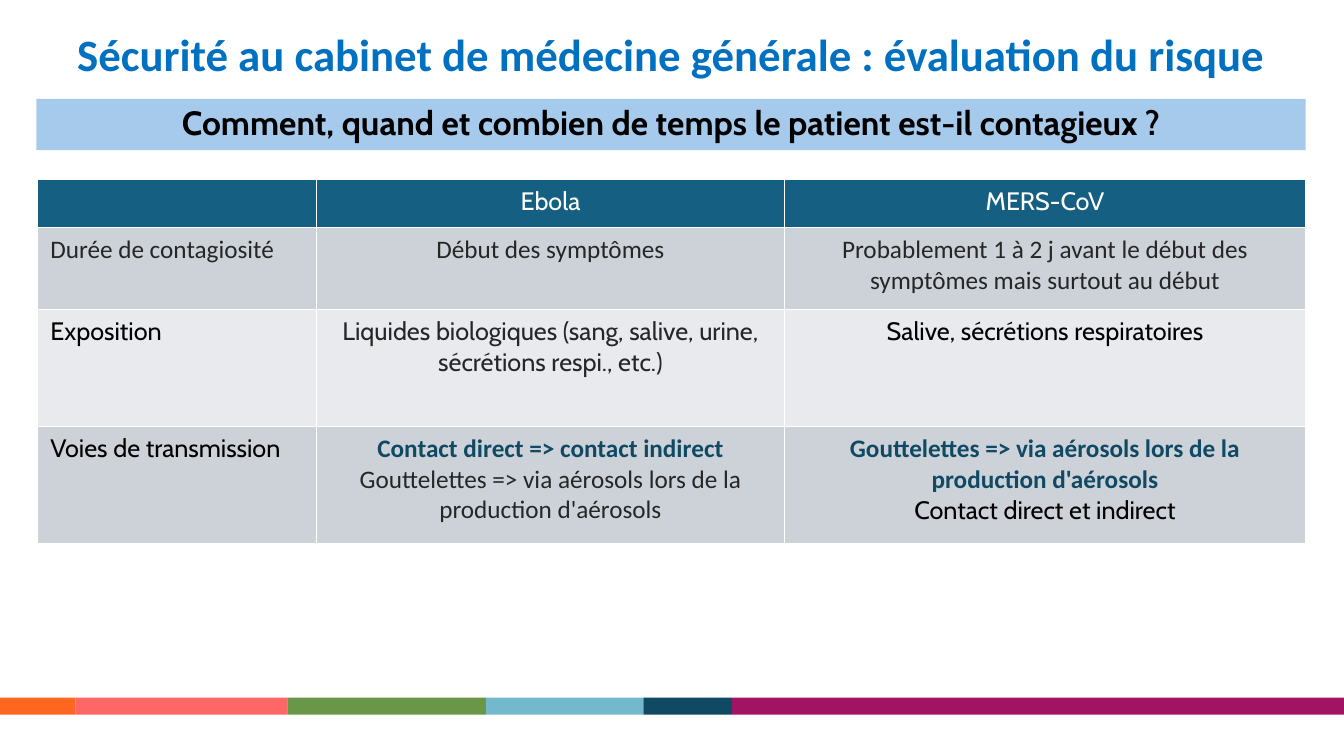
"""Build the contagion risk slide for general practice."""
from itertools import pairwise

from lxml.etree import SubElement
from pptx import Presentation
from pptx.dml.color import RGBColor
from pptx.enum.shapes import MSO_SHAPE
from pptx.enum.text import MSO_ANCHOR, MSO_AUTO_SIZE, PP_ALIGN
from pptx.oxml.ns import qn
from pptx.util import Inches, Pt

WHITE = RGBColor(0xFF, 0xFF, 0xFF)
BLACK = RGBColor(0, 0, 0)
GREY = RGBColor(0x26, 0x26, 0x26)
BLUE = RGBColor(0x00, 0x70, 0xC0)
SKY = RGBColor(0xA6, 0xCA, 0xEC)
TEAL = RGBColor(0x15, 0x60, 0x82)
NAVY = RGBColor(0x10, 0x49, 0x63)
DARK = RGBColor(0xCC, 0xD2, 0xD8)
LIGHT = RGBColor(0xE8, 0xEA, 0xED)
ORANGE = RGBColor(0xFF, 0x66, 0x1F)
PINK = RGBColor(0xFF, 0x66, 0x66)
GREEN = RGBColor(0x6A, 0x96, 0x48)
AQUA = RGBColor(0x74, 0xB8, 0xCE)
PLUM = RGBColor(0xA2, 0x13, 0x61)

EDGES = [0, 0.75, 2.85, 4.82, 6.38, 7.26, 13.33]
BANDS = [ORANGE, PINK, GREEN, AQUA, NAVY, PLUM]
COLS = [2.77, 4.64, 5.17]
ROWS = [0.48, 0.81, 1.16, 1.16]
FILLS = [TEAL, DARK, LIGHT, DARK]

HEAD = dict(color=WHITE)
PLAIN = dict(color=BLACK)
SOFT = dict(color=GREY)
CALM = dict(font="Calibri", color=GREY)
BOLD = dict(font="Calibri", color=NAVY, bold=True)
SPRAY = "Gouttelettes => via aérosols lors de la production d'aérosols"
CELLS = [
    [[("", HEAD)], [("Ebola", HEAD)], [("MERS-CoV", HEAD)]],
    [
        [("Durée de contagiosité", CALM)],
        [("Début des symptômes", CALM)],
        [("Probablement 1 à 2 j avant le début des symptômes "
          "mais surtout au début", CALM)],
    ],
    [
        [("Exposition", PLAIN)],
        [("Liquides biologiques (sang, salive, urine, "
          "sécrétions respi., etc.)", SOFT)],
        [("Salive, sécrétions respiratoires", PLAIN)],
    ],
    [
        [("Voies de transmission", PLAIN)],
        [("Contact direct => contact indirect", BOLD), (SPRAY, CALM)],
        [(SPRAY, BOLD), ("Contact direct et indirect", PLAIN)],
    ],
]


def write(para, text, font="Cabin", size=18, color=BLACK, bold=False,
          align=PP_ALIGN.CENTER, space=1.0):
    """Fill a paragraph with formatted text."""
    para.text = text
    para.alignment = align
    para.line_spacing = space
    para.font.name = font
    para.font.size = Pt(size)
    para.font.color.rgb = color
    para.font.bold = bold


def frame(shape, wrap=True):
    """Centre the text of a shape vertically, with no margins."""
    text = shape.text_frame
    text.auto_size = MSO_AUTO_SIZE.NONE
    text.word_wrap = wrap
    text.vertical_anchor = MSO_ANCHOR.MIDDLE
    text.margin_left = text.margin_right = 0
    text.margin_top = text.margin_bottom = 0
    return text.paragraphs[0]


def block(slide, left, top, width, height, fill):
    """Add a plain filled rectangle."""
    shape = slide.shapes.add_shape(
        MSO_SHAPE.RECTANGLE, Inches(left), Inches(top),
        Inches(width), Inches(height))
    shape.shadow.inherit = False
    shape.fill.solid()
    shape.fill.fore_color.rgb = fill
    shape.line.fill.background()
    return shape


def title(slide, text):
    """Place and format the title."""
    shape = slide.shapes.title
    shape.left, shape.top = Inches(0.36), Inches(0.31)
    shape.width, shape.height = Inches(12.6), Inches(0.52)
    write(frame(shape, wrap=False), text, font="Calibri", size=32,
          color=BLUE, bold=True, space=0.9)


def border(cell):
    """Give a cell thin white borders."""
    props = cell._tc.get_or_add_tcPr()
    for side in ("lnL", "lnR", "lnT", "lnB"):
        line = SubElement(props, qn(f"a:{side}"), w=str(Pt(1)))
        fill = SubElement(line, qn("a:solidFill"))
        SubElement(fill, qn("a:srgbClr"), val=str(WHITE))


def fill_cell(cell, lines, fill, align):
    """Style a cell and write its paragraphs."""
    border(cell)
    cell.fill.solid()
    cell.fill.fore_color.rgb = fill
    cell.margin_left = cell.margin_right = Inches(0.13)
    cell.margin_top = cell.margin_bottom = Inches(0.07)
    text = cell.text_frame
    for num, (line, style) in enumerate(lines):
        para = text.add_paragraph() if num else text.paragraphs[0]
        write(para, line, align=align, **style)


def table(slide):
    """Add the table comparing both diseases."""
    grid = slide.shapes.add_table(
        len(ROWS), len(COLS), Inches(0.37), Inches(1.78),
        Inches(sum(COLS)), Inches(sum(ROWS))).table
    for col, width in zip(grid.columns, COLS):
        col.width = Inches(width)
    for row, height, cells, fill in zip(grid.rows, ROWS, CELLS, FILLS):
        row.height = Inches(height)
        for num, (cell, lines) in enumerate(zip(row.cells, cells)):
            align = PP_ALIGN.CENTER if num else PP_ALIGN.LEFT
            fill_cell(cell, lines, fill, align)


def main():
    """Build and save the slide."""
    deck = Presentation()
    deck.slide_width, deck.slide_height = Inches(13.33), Inches(7.5)
    slide = deck.slides.add_slide(deck.slide_layouts[5])
    for (left, right), color in zip(pairwise(EDGES), BANDS):
        block(slide, left, 6.92, right - left, 0.17, color)
    title(slide, "Sécurité au cabinet de médecine générale : "
                 "évaluation du risque")
    banner = block(slide, 0.36, 0.98, 12.59, 0.51, SKY)
    write(frame(banner), "Comment, quand et combien de temps "
          "le patient est-il contagieux ?", size=24, bold=True, space=0.9)
    table(slide)
    deck.save("out.pptx")


if __name__ == "__main__":
    main()
